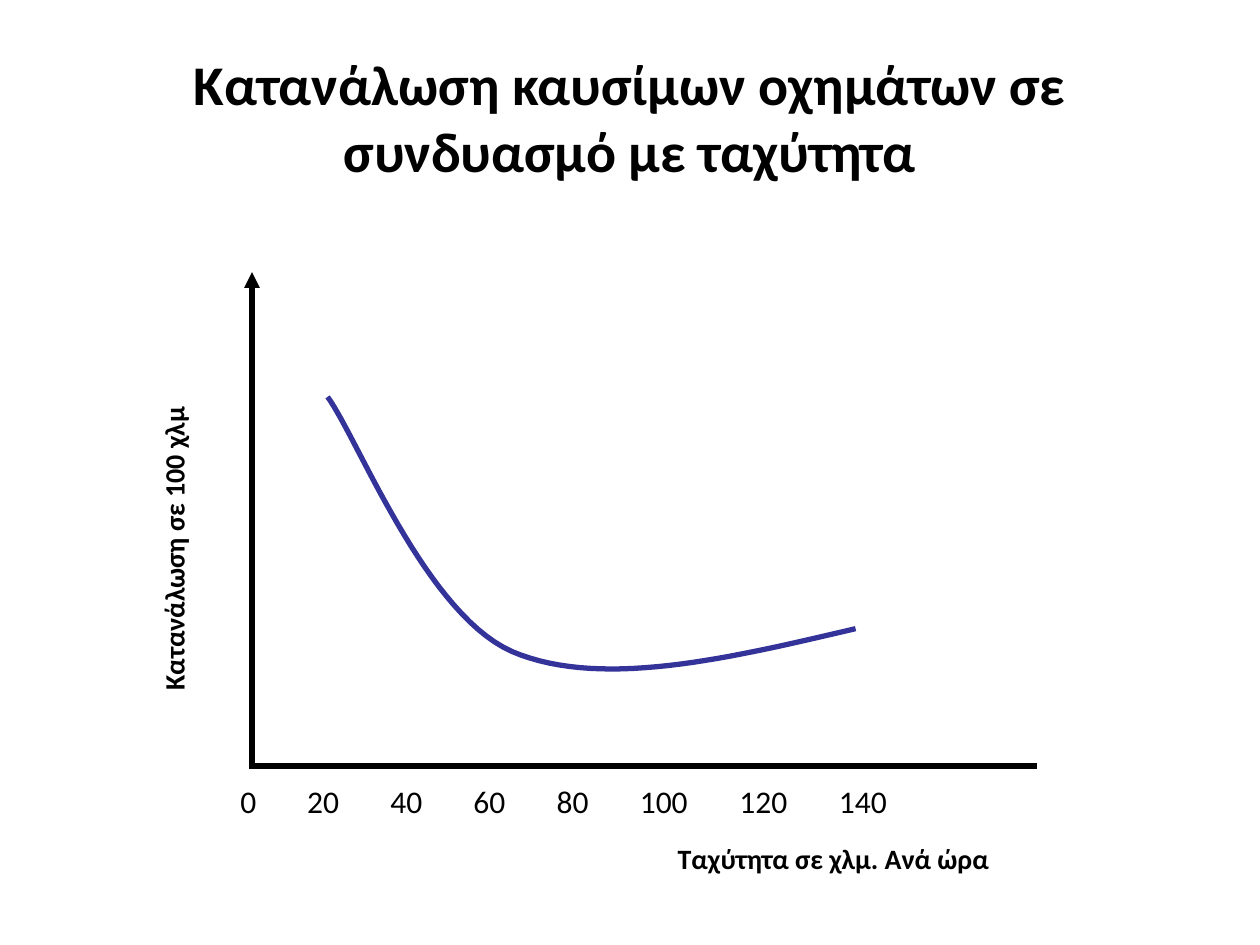
from pptx import Presentation
from pptx.dml.color import RGBColor
from pptx.enum.text import MSO_ANCHOR, MSO_AUTO_SIZE, PP_ALIGN
from pptx.oxml.ns import qn
from pptx.util import Inches, Pt
from lxml.etree import SubElement

BLACK = "000000"
CURVE_BLUE = "333399"
CURVE_START = (6.79, 4.99)
CURVE_SEGMENTS = [
    ((5.77, 5.23), (4.76, 5.47), (4.06, 5.17)),
    ((3.37, 4.86), (2.84, 3.48), (2.6, 3.15)),
]


def colour(hex_code):
    return RGBColor.from_string(hex_code)


def format_text(frame, size, bold, align):
    paragraph = frame.paragraphs[0]
    paragraph.alignment = align
    for run in paragraph.runs:
        run.font.name = "Calibri"
        run.font.size = Pt(size)
        run.font.bold = bold
        run.font.color.rgb = colour(BLACK)


def add_label(slide, box, text, size, bold=False, align=PP_ALIGN.LEFT, wrap=True):
    label = slide.shapes.add_textbox(*map(Inches, box))
    frame = label.text_frame
    frame.text = text
    frame.word_wrap = wrap
    frame.auto_size = MSO_AUTO_SIZE.SHAPE_TO_FIT_TEXT
    format_text(frame, size, bold, align)
    return label


def add_title(slide, box):
    title = slide.shapes.title
    title.left, title.top, title.width, title.height = map(Inches, box)
    frame = title.text_frame
    frame.text = "Κατανάλωση καυσίμων οχημάτων σε συνδυασμό με ταχύτητα"
    frame.vertical_anchor = MSO_ANCHOR.MIDDLE
    format_text(frame, 32, True, PP_ALIGN.CENTER)


def add_axis(slide, start, end, arrow=False):
    axis = slide.shapes.add_connector(1, *map(Inches, start + end))
    axis.line.color.rgb = colour(BLACK)
    axis.line.width = Pt(3)
    properties = axis._element.spPr
    if arrow:
        SubElement(properties.find(qn("a:ln")), qn("a:tailEnd"), type="triangle")
    SubElement(properties, qn("a:effectLst"))


def add_axes(slide, box):
    left, top, width, height = box
    bottom = top + height
    add_axis(slide, (left, bottom), (left, top), arrow=True)
    add_axis(slide, (left - 0.02, bottom), (left + width, bottom))


def add_speed_scale(slide, left, top):
    for speed in range(0, 141, 20):
        width = 0.2 + 0.13 * len(str(speed))
        add_label(slide, (left, top, width, 0.4), str(speed), 18,
                  align=PP_ALIGN.JUSTIFY, wrap=False)
        left += width + 0.2


def add_axis_names(slide, box):
    left, top, width, height = box
    consumption = add_label(slide, (left - 2.73, top + 2.01, 4.22, 0.37),
                            "Κατανάλωση σε 100 χλμ", 16, True, PP_ALIGN.CENTER)
    consumption.rotation = 270
    consumption.text_frame.paragraphs[0].space_before = Pt(13.5)
    add_label(slide, (left + 3.28, top + height + 0.55, 3.98, 0.37),
              "Ταχύτητα σε χλμ. Ανά ώρα", 16, True)


def bezier_points(start, segments, steps=30):
    for first, second, end in segments:
        for step in range(1, steps + 1):
            t = step / steps
            weights = ((1 - t) ** 3, 3 * t * (1 - t) ** 2, 3 * t ** 2 * (1 - t), t ** 3)
            yield tuple(
                sum(weight * value for weight, value in zip(weights, values))
                for values in zip(start, first, second, end)
            )
        start = end


def add_consumption_curve(slide, box):
    left, top = box[:2]
    offset_x, offset_y = left - 2, top - 2.16
    builder = slide.shapes.build_freeform(
        Inches(CURVE_START[0] + offset_x), Inches(CURVE_START[1] + offset_y))
    builder.add_line_segments(
        [(Inches(x + offset_x), Inches(y + offset_y))
         for x, y in bezier_points(CURVE_START, CURVE_SEGMENTS)], close=False)
    curve = builder.convert_to_shape()
    curve.shadow.inherit = False
    curve.fill.background()
    curve.line.color.rgb = colour(CURVE_BLUE)
    curve.line.width = Pt(3)


def add_consumption_graph(slide, box):
    left, top, width, height = box
    add_axes(slide, box)
    add_axis_names(slide, box)
    add_speed_scale(slide, left - 0.19, top + height + 0.08)
    add_consumption_curve(slide, box)


def main():
    presentation = Presentation()
    presentation.slide_width = Inches(10)
    presentation.slide_height = Inches(7.5)
    slide = presentation.slides.add_slide(presentation.slide_layouts[5])
    add_title(slide, (0.5, 0.3, 9, 1.25))
    add_consumption_graph(slide, (2, 2.16, 6.23, 3.92))
    presentation.save("out.pptx")


if __name__ == "__main__":
    main()
